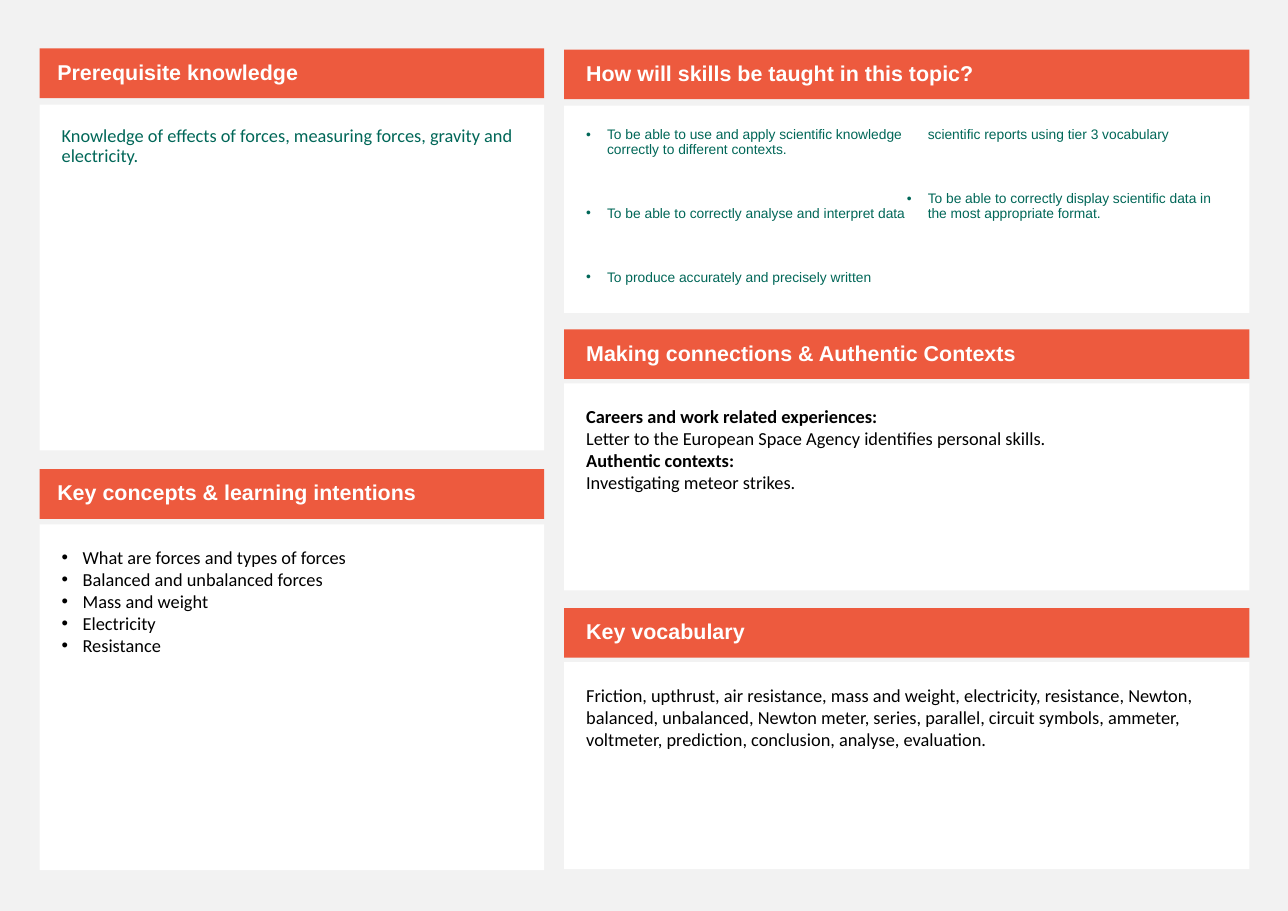
"""Build a one-page science topic overview made of titled panels."""
from dataclasses import dataclass

from lxml import etree
from pptx import Presentation
from pptx.dml.color import RGBColor
from pptx.enum import shapes, text
from pptx.oxml.ns import qn
from pptx.util import Inches, Pt


@dataclass(frozen=True)
class Theme:
    background: str = "F2F2F2"
    banner: str = "ED5A3E"
    paper: str = "FFFFFF"
    green: str = "006758"
    black: str = "000000"
    heading_font: str = "Arial"
    body_font: str = "Calibri"
    heading_size: float = 14
    body_size: float = 12
    skill_size: float = 9


THEME = Theme()


@dataclass(frozen=True)
class TextStyle:
    font: str = THEME.body_font
    size: float = THEME.body_size
    color: str = THEME.black
    bold: bool = False
    spacing: float = 1.0
    before: float = 0
    bullet: bool = False


@dataclass(frozen=True)
class Column:
    left: float
    width: float
    body_height: float
    heading_inset: float


@dataclass(frozen=True)
class Panel:
    column: Column
    top: float
    body_top: float
    heading: str
    lines: tuple[str, ...]
    style: TextStyle = TextStyle()
    text_columns: int = 1
    bold_lines: tuple[int, ...] = ()


HEADING = TextStyle(THEME.heading_font, THEME.heading_size, THEME.paper, True, 0.9)
INTRO = TextStyle(color=THEME.green, spacing=0.9)
BULLETS = TextStyle(bullet=True)
SKILLS = TextStyle(THEME.heading_font, THEME.skill_size, THEME.green,
                   spacing=0.9, before=32, bullet=True)
HEADING_HEIGHT = 0.45
BODY_INSET = 0.2
BULLET_INDENT = 0.19
LEFT = Column(0.36, 4.58, 3.14, 0.16)
RIGHT = Column(5.12, 6.22, 1.88, 0.2)

PANELS = (
    Panel(LEFT, 0.44, 0.95, "Prerequisite knowledge", (
        "Knowledge of effects of forces, measuring forces, gravity and electricity.",
    ), INTRO),
    Panel(LEFT, 4.26, 4.76, "Key concepts & learning intentions", (
        "What are forces and types of forces",
        "Balanced and unbalanced forces",
        "Mass and weight",
        "Electricity",
        "Resistance",
    ), BULLETS),
    Panel(RIGHT, 0.45, 0.96, "How will skills be taught in this topic?", (
        "To be able to use and apply scientific knowledge correctly to different contexts.",
        "To be able to correctly analyse and interpret data",
        "To produce accurately and precisely written scientific reports using tier 3 vocabulary",
        "To be able to correctly display scientific data in the most appropriate format.",
    ), SKILLS, text_columns=2),
    Panel(RIGHT, 2.99, 3.48, "Making connections & Authentic Contexts", (
        "Careers and work related experiences:",
        "Letter to the European Space Agency identifies personal skills.",
        "Authentic contexts:",
        "Investigating meteor strikes.",
    ), bold_lines=(0, 2)),
    Panel(RIGHT, 5.52, 6.01, "Key vocabulary", (
        "Friction, upthrust, air resistance, mass and weight, electricity, resistance, "
        "Newton, balanced, unbalanced, Newton meter, series, parallel, circuit symbols, "
        "ammeter, voltmeter, prediction, conclusion, analyse, evaluation.",
    )),
)


def add_box(slide, column: Column, top: float, height: float, fill: str):
    sp = slide.shapes.add_shape(
        shapes.MSO_SHAPE.RECTANGLE, Inches(column.left), Inches(top),
        Inches(column.width), Inches(height))
    sp.shadow.inherit = False
    sp.fill.solid()
    sp.fill.fore_color.rgb = RGBColor.from_string(fill)
    sp.line.fill.background()
    sp.text_frame.word_wrap = True
    return sp


def set_insets(tf, left: float, top: float, right: float, bottom: float) -> None:
    tf.margin_left, tf.margin_top = Inches(left), Inches(top)
    tf.margin_right, tf.margin_bottom = Inches(right), Inches(bottom)


def add_bullet(p) -> None:
    props = p._p.get_or_add_pPr()
    props.set("marL", str(Inches(BULLET_INDENT)))
    props.set("indent", str(-Inches(BULLET_INDENT)))
    etree.SubElement(props, qn("a:buFont")).set("typeface", "Arial")
    etree.SubElement(props, qn("a:buChar")).set("char", "•")


def write_lines(tf, lines: tuple[str, ...], style: TextStyle,
                bold_lines: tuple[int, ...] = ()) -> None:
    tf.text = "\n".join(lines)
    for index, p in enumerate(tf.paragraphs):
        p.alignment = text.PP_ALIGN.LEFT
        p.line_spacing = style.spacing
        p.space_before = Pt(style.before)
        if style.bullet:
            add_bullet(p)
        for r in p.runs:
            r.font.name = style.font
            r.font.size = Pt(style.size)
            r.font.bold = style.bold or index in bold_lines
            r.font.color.rgb = RGBColor.from_string(style.color)


def add_panel(slide, panel: Panel) -> None:
    column = panel.column
    body = add_box(slide, column, panel.body_top, column.body_height, THEME.paper)
    tf = body.text_frame
    tf.vertical_anchor = text.MSO_ANCHOR.TOP
    set_insets(tf, BODY_INSET, BODY_INSET, BODY_INSET, BODY_INSET)
    if panel.text_columns > 1:
        tf._txBody.bodyPr.set("numCol", str(panel.text_columns))
    write_lines(tf, panel.lines, panel.style, panel.bold_lines)

    banner = add_box(slide, column, panel.top, HEADING_HEIGHT, THEME.banner)
    tf = banner.text_frame
    tf.vertical_anchor = text.MSO_ANCHOR.MIDDLE
    set_insets(tf, column.heading_inset, 0.05, 0.1, 0.05)
    write_lines(tf, (panel.heading,), HEADING)


def main() -> None:
    prs = Presentation()
    prs.slide_width, prs.slide_height = Inches(11.69), Inches(8.27)
    slide = prs.slides.add_slide(prs.slide_layouts[6])
    slide.background.fill.solid()
    slide.background.fill.fore_color.rgb = RGBColor.from_string(THEME.background)
    for panel in PANELS:
        add_panel(slide, panel)
    prs.save("out.pptx")


if __name__ == "__main__":
    main()
